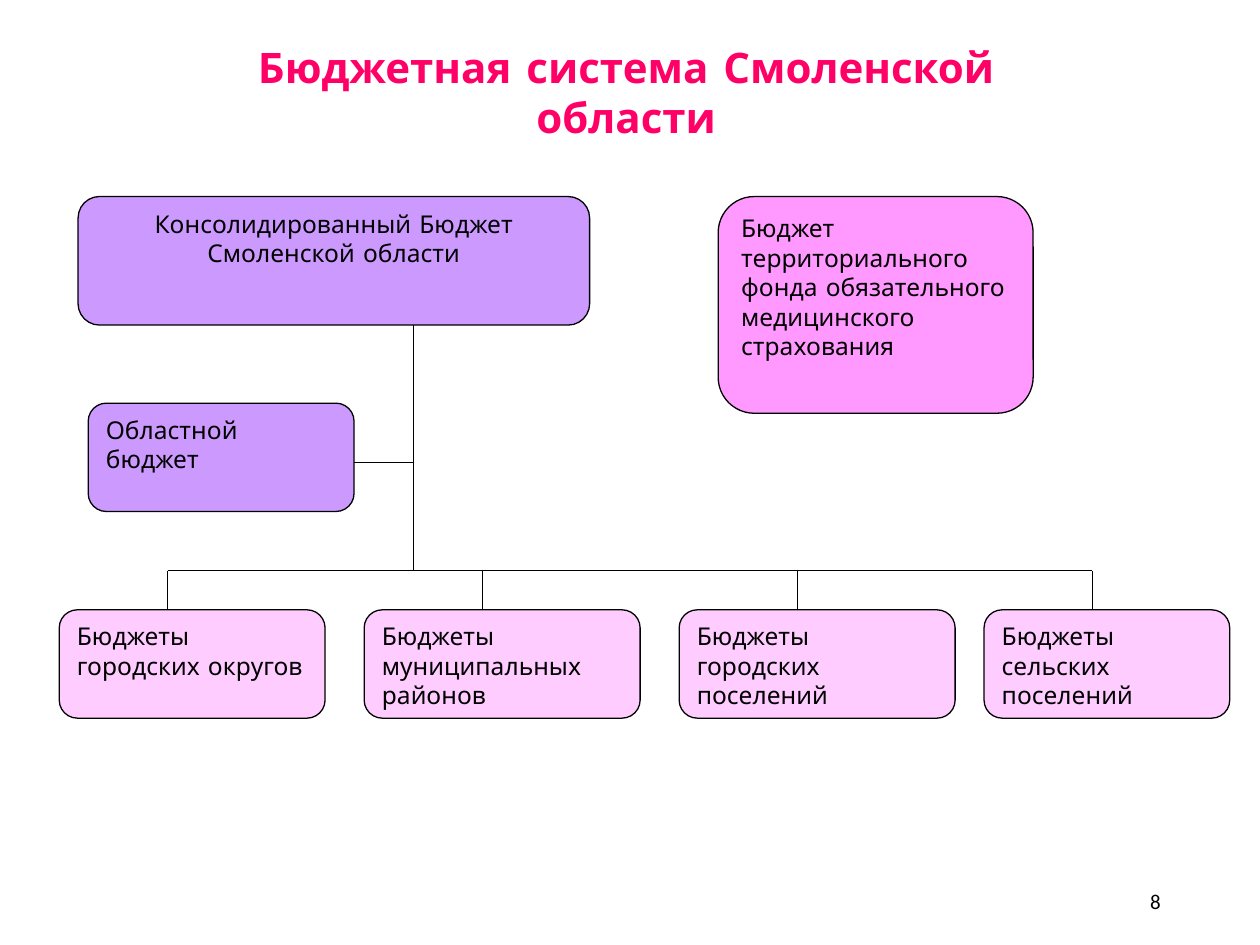
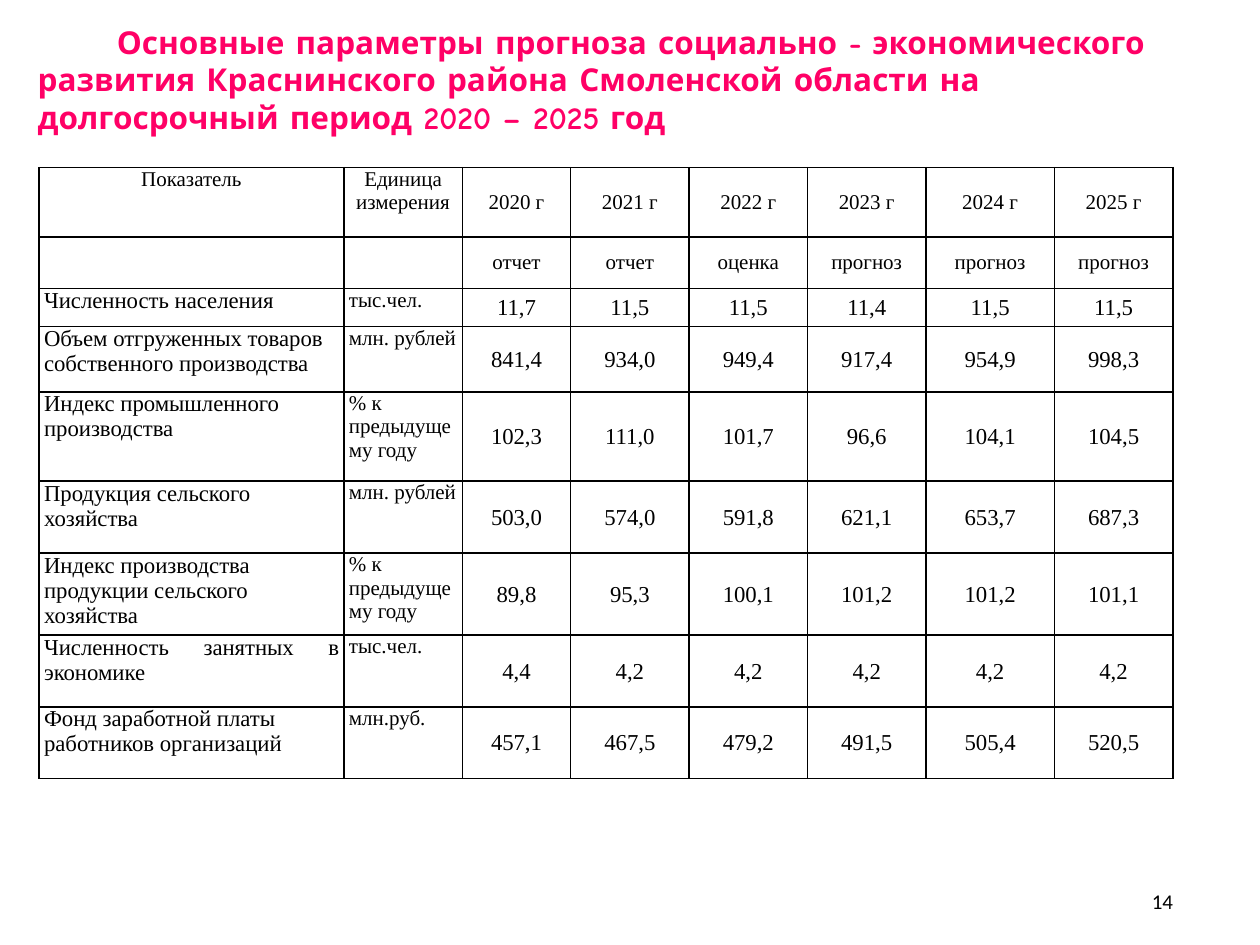
import pptx
import pptx.dml.color
import pptx.enum.shapes
import pptx.enum.text
import pptx.oxml
import pptx.oxml.ns
import pptx.util
from pptx.util import Inches

BLACK = pptx.dml.color.RGBColor(0x00, 0x00, 0x00)
CRIMSON = pptx.dml.color.RGBColor(0xFF, 0x00, 0x66)
VIOLET = pptx.dml.color.RGBColor(0xCC, 0x99, 0xFF)
PINK = pptx.dml.color.RGBColor(0xFF, 0x99, 0xFF)
PALE_PINK = pptx.dml.color.RGBColor(0xFF, 0xCC, 0xFF)
HEADING_FONT = "Comic Neue"
TABLE_FONT = "Times New Roman"
NUMBER_FONT = "Calibri"
LEFT = pptx.enum.text.PP_ALIGN.LEFT
CENTER = pptx.enum.text.PP_ALIGN.CENTER
RIGHT = pptx.enum.text.PP_ALIGN.RIGHT
JUSTIFY = pptx.enum.text.PP_ALIGN.JUSTIFY
TOP = pptx.enum.text.MSO_ANCHOR.TOP
MIDDLE = pptx.enum.text.MSO_ANCHOR.MIDDLE


def write_text(text_frame, text, font, size, color=BLACK, alignment=LEFT, bold=False):
    text_frame.text = text
    text_frame.word_wrap = True
    for paragraph in text_frame.paragraphs:
        paragraph.alignment = alignment
        for run in paragraph.runs:
            run.font.name = font
            run.font.size = pptx.util.Pt(size)
            run.font.color.rgb = color
            run.font.bold = bold


def add_text_box(slide, box, *style):
    text_frame = slide.shapes.add_textbox(*map(Inches, box)).text_frame
    write_text(text_frame, *style)
    return text_frame


presentation = pptx.Presentation()
presentation.slide_width = Inches(10)
presentation.slide_height = Inches(7.5)
blank_layout = presentation.slide_layouts[6]
system_slide = presentation.slides.add_slide(blank_layout)
forecast_slide = presentation.slides.add_slide(blank_layout)

for slide, number, inset in ((system_slide, "8", 0.1), (forecast_slide, "14", 0)):
    number_frame = add_text_box(slide, (7.06, 6.95, 2.25, 0.4), number, NUMBER_FONT, 12, BLACK, RIGHT)
    number_frame.vertical_anchor = MIDDLE
    number_frame.margin_left = number_frame.margin_right = Inches(inset)

add_text_box(system_slide, (1.69, 0.28, 6.56, 0.47),
             "Бюджетная система Смоленской области", HEADING_FONT, 24, CRIMSON, CENTER, True)

trunk_x = 3.28
branch_y = 4.53
level_y = 4.84
level_centers = (1.33, 3.83, 6.33, 8.67)
connections = [
    (trunk_x, 2.58, trunk_x, branch_y, 0.75),
    (level_centers[0], branch_y, level_centers[-1], branch_y, 0.5),
    (2.81, 3.67, trunk_x, 3.67, 0.5),
]
connections += [(center, branch_y, center, level_y, 0.5) for center in level_centers]

budgets = [
    ("Консолидированный Бюджет Смоленской области", 0.62, 1.56, 4.06, 1.02, VIOLET, CENTER),
    ("Областной бюджет", 0.7, 3.2, 2.11, 0.86, VIOLET, LEFT),
    ("Бюджет территориального фонда обязательного медицинского страхования",
     5.7, 1.56, 2.5, 1.72, PINK, LEFT),
]
local_levels = [
    ("городских округов", 0.47, 2.11),
    ("муниципальных районов", 2.89, 2.19),
    ("городских поселений", 5.39, 2.19),
    ("сельских поселений", 7.81, 1.95),
]
budgets += [("Бюджеты " + level, left, level_y, width, 0.86, PALE_PINK, LEFT)
            for level, left, width in local_levels]

for text, left, top, width, height, color, alignment in budgets:
    shape = system_slide.shapes.add_shape(
        pptx.enum.shapes.MSO_SHAPE.FLOWCHART_ALTERNATE_PROCESS,
        Inches(left), Inches(top), Inches(width), Inches(height))
    shape.shadow.inherit = False
    shape.fill.solid()
    shape.fill.fore_color.rgb = color
    shape.line.color.rgb = BLACK
    shape.line.width = pptx.util.Pt(0.75)
    shape.text_frame.vertical_anchor = TOP
    write_text(shape.text_frame, text, HEADING_FONT, 14, BLACK, alignment)

for start_x, start_y, end_x, end_y, width in connections:
    connector = system_slide.shapes.add_connector(
        pptx.enum.shapes.MSO_CONNECTOR.STRAIGHT,
        Inches(start_x), Inches(start_y), Inches(end_x), Inches(end_y))
    connector.line.color.rgb = BLACK
    connector.line.width = pptx.util.Pt(width)
    connector._element.spPr.append(pptx.oxml.parse_xml(
        f'<a:effectLst {pptx.oxml.ns.nsdecls("a")}/>'))

title_frame = add_text_box(
    forecast_slide, (0.2, 0.13, 9.61, 1),
    "Основные параметры прогноза социально - экономического развития Краснинского района "
    "Смоленской области на долгосрочный период 2020 – 2025 год",
    HEADING_FONT, 18, CRIMSON, LEFT, True)
title_frame.paragraphs[0]._p.get_or_add_pPr().set("indent", str(Inches(0.63)))

rows = [
    ("Показатель", "Единица измерения", "2020 г", "2021 г", "2022 г", "2023 г", "2024 г", "2025 г"),
    ("", "", "отчет", "отчет", "оценка", "прогноз", "прогноз", "прогноз"),
    ("Численность населения", "тыс.чел.", "11,7", "11,5", "11,5", "11,4", "11,5", "11,5"),
    ("Объем отгруженных товаров собственного производства", "млн. рублей",
     "841,4", "934,0", "949,4", "917,4", "954,9", "998,3"),
    ("Индекс промышленного\nпроизводства", "% к предыдущему году",
     "102,3", "111,0", "101,7", "96,6", "104,1", "104,5"),
    ("Продукция сельского хозяйства", "млн. рублей",
     "503,0", "574,0", "591,8", "621,1", "653,7", "687,3"),
    ("Индекс производства продукции сельского хозяйства", "% к предыдущему году",
     "89,8", "95,3", "100,1", "101,2", "101,2", "101,1"),
    ("Численность занятных в экономике", "тыс.чел.", "4,4", "4,2", "4,2", "4,2", "4,2", "4,2"),
    ("Фонд заработной платы работников организаций", "млн.руб.",
     "457,1", "467,5", "479,2", "491,5", "505,4", "520,5"),
]
column_widths = (2.42, 0.94, 0.86, 0.94, 0.94, 0.94, 1.02, 0.94)
row_heights = (0.55, 0.41, 0.3, 0.52, 0.71, 0.57, 0.57, 0.57, 0.57)
header_rows = 2
label_columns = 2

table = forecast_slide.shapes.add_table(
    len(rows), len(column_widths), Inches(0.31), Inches(1.33),
    Inches(sum(column_widths)), Inches(sum(row_heights))).table
table.first_row = False
table.horz_banding = False
for column, width in zip(table.columns, column_widths):
    column.width = Inches(width)
for row, height in zip(table.rows, row_heights):
    row.height = Inches(height)

for row_index, row in enumerate(rows):
    for column_index, text in enumerate(row):
        cell = table.cell(row_index, column_index)
        is_header = row_index < header_rows
        is_label = column_index < label_columns
        if is_header or not is_label:
            alignment = CENTER
        elif column_index == 0 and text.startswith("Численность"):
            alignment = JUSTIFY
        else:
            alignment = LEFT
        size = 12 if is_header or column_index == 1 else 13
        write_text(cell.text_frame, text, TABLE_FONT, size, BLACK, alignment)
        cell.vertical_anchor = TOP if is_label else MIDDLE
        side_margin = 0.04 if is_header or is_label else 0.01
        cell.margin_left = cell.margin_right = Inches(side_margin)
        cell.margin_top = Inches(0 if is_header or is_label else 0.01)
        cell.margin_bottom = 0
        properties = cell._tc.get_or_add_tcPr()
        for side in "LRTB":
            properties.append(pptx.oxml.parse_xml(
                f'<a:ln{side} {pptx.oxml.ns.nsdecls("a")} w="12700"><a:solidFill>'
                f'<a:srgbClr val="{BLACK}"/></a:solidFill></a:ln{side}>'))
        cell.fill.background()

presentation.save("out.pptx")
